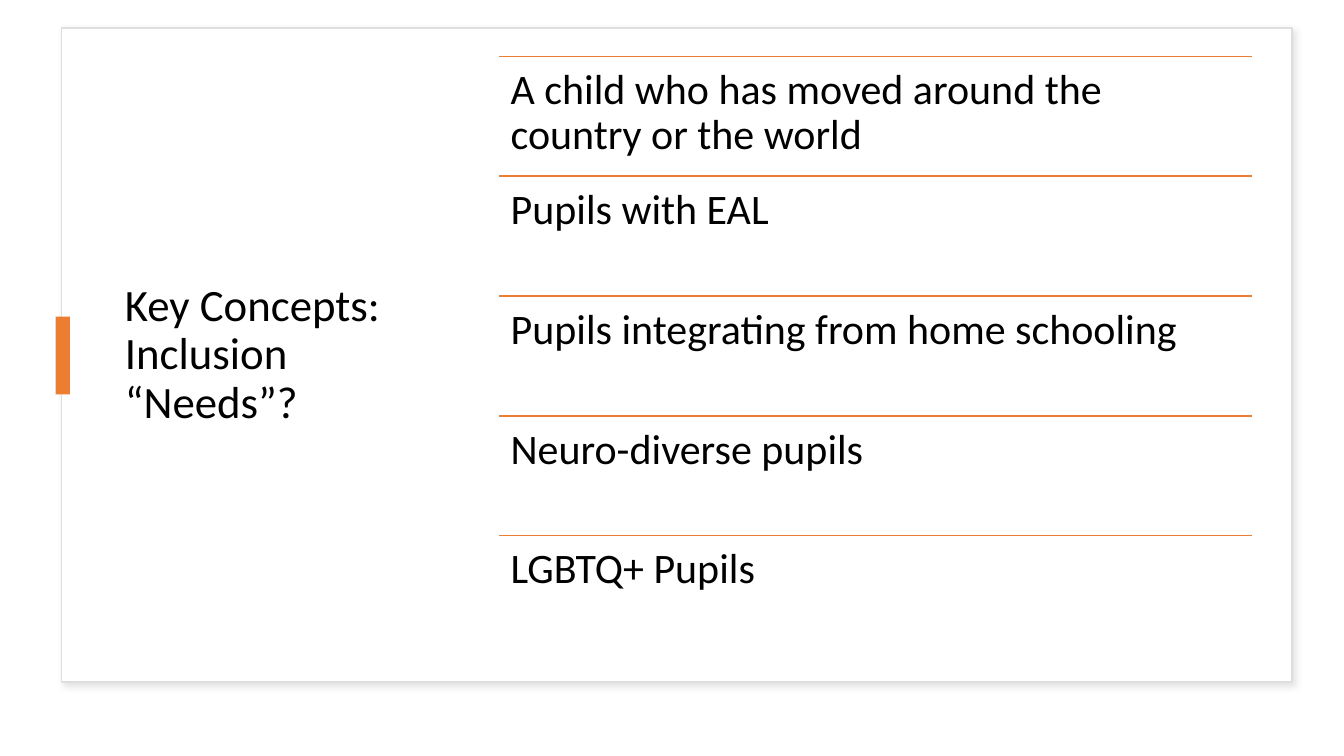
"""Build the slide on key concepts of inclusion needs."""
from lxml.etree import SubElement
from pptx import Presentation
from pptx.dml.color import RGBColor
from pptx.enum.shapes import MSO_CONNECTOR as Connector, MSO_SHAPE as Shape
from pptx.enum.text import MSO_ANCHOR as Anchor
from pptx.oxml.ns import qn
from pptx.util import Cm, Pt

TITLE = "Key Concepts: Inclusion “Needs”?"
NEEDS = [
    "A child who has moved around the country or the world",
    "Pupils with EAL",
    "Pupils integrating from home schooling",
    "Neuro-diverse pupils",
    "LGBTQ+ Pupils",
]
COLOURS = {"card": "FFFFFF", "border": "DEDEDE", "shadow": "C5C3C3",
           "accent": "ED7D31", "text": "000000"}
FONT = "Calibri"
CARD = (1.55, 0.71, 31.01, 16.48)
TITLE_AREA = (2.9, 1.4, 8.31, 15.11)
MARKER = (1.4, 7.98, 0.36, 1.96)
LIST_LEFT, LIST_TOP, LIST_WIDTH, ROW_HEIGHT = 12.57, 1.42, 18.97, 3.02


def colour(name):
    return RGBColor.from_string(COLOURS[name])


def add_block(page, area, fill):
    block = page.shapes.add_shape(Shape.RECTANGLE, *map(Cm, area))
    block.shadow.inherit = False
    block.fill.solid()
    block.fill.fore_color.rgb = colour(fill)
    block.line.fill.background()
    return block


def add_shadow(block):
    effects = block._element.spPr.find(qn("a:effectLst"))
    shadow = SubElement(effects, qn("a:outerShdw"), blurRad=str(Pt(4)),
                        dist=str(Pt(3)), dir="2700000", algn="tl", rotWithShape="0")
    tint = SubElement(shadow, qn("a:srgbClr"), val=COLOURS["shadow"])
    SubElement(tint, qn("a:alpha"), val="50000")


def add_text(page, area, text, size, inset, anchor):
    box = page.shapes.add_textbox(*map(Cm, area))
    frame = box.text_frame
    frame.text = text
    frame.word_wrap = True
    frame.vertical_anchor = anchor
    frame.margin_left = frame.margin_right = Cm(inset[0])
    frame.margin_top = frame.margin_bottom = Cm(inset[1])
    para = frame.paragraphs[0]
    para.line_spacing = 0.9
    font = para.runs[0].font
    font.name, font.size, font.color.rgb = FONT, Pt(size), colour("text")


def add_rule(page, top):
    rule = page.shapes.add_connector(Connector.STRAIGHT, Cm(LIST_LEFT), Cm(top),
                                     Cm(LIST_LEFT + LIST_WIDTH), Cm(top))
    rule.line.color.rgb = colour("accent")
    rule.line.width = Pt(1)
    SubElement(rule._element.spPr, qn("a:effectLst"))


def main():
    deck = Presentation()
    deck.slide_width, deck.slide_height = Cm(33.87), Cm(19.05)
    page = deck.slides.add_slide(deck.slide_layouts[6])

    card = add_block(page, CARD, "card")
    card.line.color.rgb = colour("border")
    card.line.width = Pt(1)
    add_shadow(card)
    add_text(page, TITLE_AREA, TITLE, 32, (0.25, 0.13), Anchor.MIDDLE)
    add_block(page, MARKER, "accent")

    for index, need in enumerate(NEEDS):
        top = LIST_TOP + index * ROW_HEIGHT
        add_rule(page, top)
        add_text(page, (LIST_LEFT, top, LIST_WIDTH, ROW_HEIGHT), need, 30,
                 (0.3, 0.3), Anchor.TOP)

    deck.save("out.pptx")


if __name__ == "__main__":
    main()
